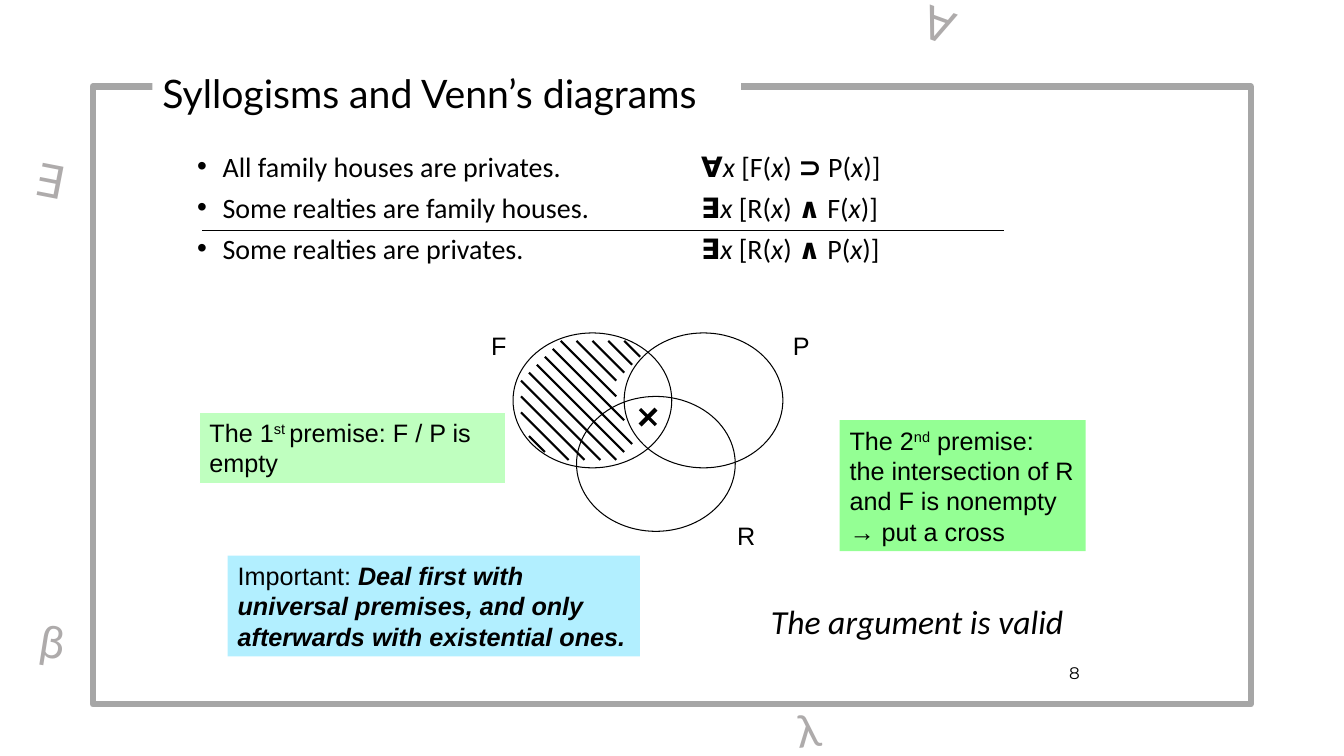
from pptx import Presentation
from pptx.dml.color import RGBColor
from pptx.enum.shapes import MSO_CONNECTOR, MSO_SHAPE
from pptx.enum.text import MSO_ANCHOR, PP_ALIGN
from pptx.oxml.ns import qn
from pptx.util import Cm, Pt
from lxml.etree import SubElement

COLORS = {"black": "000000", "white": "FFFFFF", "frame": "A6A6A6",
          "symbol": "AEABAB", "green": "00FF00", "blue": "00CCFF"}
STYLES = {"": {}, "b": {"bold": True}, "i": {"italic": True},
          "bi": {"bold": True, "italic": True}, "sup": {}}

TITLE = "Syllogisms and Venn’s diagrams"
ARGUMENT = [
    ("All family houses are privates.", "∀", "F", "⊃", "P"),
    ("Some realties are family houses.", "∃", "R", "∧", "F"),
    ("Some realties are privates.", "∃", "R", "∧", "P"),
]
NOTES = [
    ((5.03, 10.39, 7.7, 1.8), "green", 25, "white",
     [("The 1", ""), ("st ", "sup"), ("premise: F / P is empty", "")]),
    ((21.16, 10.59, 6.2, 3.3), "green", 42, None,
     [("The 2", ""), ("nd", "sup"),
      (" premise: the intersection of R and F is nonempty → put a cross", "")]),
    ((5.74, 14, 10.39, 2.54), "blue", 30, None,
     [("Important: ", ""),
      ("Deal first with universal premises, and only afterwards with existential ones.", "bi")]),
]
SYMBOLS = [
    ("∀", (23.01, -0.15, 1.52, 1.63), 20),
    ("∃", (0.64, 3.76, 1.6, 1.63), 11),
    ("β", (0.76, 15.37, 1.47, 1.63), 9),
    ("λ", (19.82, 17.53, 1.82, 1.63), 354),
]

GRID_LEFT, GRID_TOP, STEP = 13.13, 8.59, 0.2
SETS = [("F", (-1, -1), (-5, -2)), ("P", (13, -1), (33, -2)), ("R", (7, 7), (26, 22))]
HATCHES = [
    (13, 0, 2), (11, 0, 3), (9, 0, 4), (7, 0, 5), (5, 0, 7), (4, 1, 9), (3, 2, 11),
    (2, 3, 11), (1, 4, 11), (0, 7, 8), (0, 5, 10), (0, 9, 6), (1, 12, 2),
]
CROSS = (15, 8.6, 2)


def color(name):
    return RGBColor.from_string(COLORS[name])


def lengths(values):
    return [Cm(value) for value in values]


def on_grid(column, row):
    return GRID_LEFT + column * STEP, GRID_TOP + row * STEP


def write(para, spans, size, font, ink="black"):
    for text, style in spans:
        span = para.add_run()
        span.text = text
        formats = {"size": Pt(size), "name": font, **STYLES[style]}
        for name, value in formats.items():
            setattr(span.font, name, value)
        span.font.color.rgb = color(ink)
        if style == "sup":
            span._r.get_or_add_rPr().set("baseline", "30000")


def add_text(page, place, spans, size, font, ink="black"):
    box = page.shapes.add_textbox(*lengths(place))
    box.text_frame.word_wrap = True
    write(box.text_frame.paragraphs[0], spans, size, font, ink)
    return box


def add_line(page, start, end, width):
    line = page.shapes.add_connector(MSO_CONNECTOR.STRAIGHT, *lengths(start + end))
    line.line.color.rgb = color("black")
    line.line.width = Pt(width)
    SubElement(line.element.spPr, qn("a:effectLst"))


def add_outline(page, kind, place, fill=None, line=None, width=0.75):
    shape = page.shapes.add_shape(kind, *lengths(place))
    shape.shadow.inherit = False
    if fill:
        shape.fill.solid()
        shape.fill.fore_color.rgb = color(fill)
    else:
        shape.fill.background()
    if line:
        shape.line.color.rgb = color(line)
        shape.line.width = Pt(width)
    else:
        shape.line.fill.background()
    return shape


def add_argument(page):
    box = page.shapes.add_textbox(*lengths((4.72, 3.81, 24.41, 3.99)))
    frame = box.text_frame
    frame.word_wrap = True
    for index, (sentence, quantifier, first, connective, second) in enumerate(ARGUMENT):
        para = frame.add_paragraph() if index else frame.paragraphs[0]
        para.line_spacing = 0.8
        para.space_before = Pt(10)
        settings = para._p.get_or_add_pPr()
        for name, value in {"marL": Cm(0.64), "indent": Cm(-0.64), "defTabSz": Cm(2.54)}.items():
            settings.set(name, str(int(value)))
        SubElement(settings, qn("a:buFont"), typeface="Arial")
        SubElement(settings, qn("a:buChar"), char="•")
        write(para, [(sentence + "\t\t", ""), (quantifier, "b"), ("x ", "i"),
                     (f"[{first}(", ""), ("x", "i"), (") ", ""), (connective + " ", "b"),
                     (f"{second}(", ""), ("x", "i"), (")]", "")], 20, "Calibri")


def add_venn(page):
    for letter, circle, label in SETS:
        add_outline(page, MSO_SHAPE.OVAL, on_grid(*circle) + (4, 3.4), line="black")
        add_text(page, on_grid(*label) + (1.2, 1.02), [(letter, "")], 18, "Arial")
    for column, row, steps in HATCHES:
        add_line(page, on_grid(column, row), on_grid(column + steps, row + steps), 1.5)
    column, row, steps = CROSS
    add_line(page, on_grid(column, row), on_grid(column + steps, row + steps), 2.25)
    add_line(page, on_grid(column + steps, row), on_grid(column, row + steps), 3)


def add_notes(page):
    for place, fill, opacity, line, spans in NOTES:
        note = add_outline(page, MSO_SHAPE.RECTANGLE, place, fill, line)
        tint = note.element.spPr.find(qn("a:solidFill"))[0]
        SubElement(tint, qn("a:alpha"), val=str(opacity * 1000))
        note.text_frame.word_wrap = True
        note.text_frame.vertical_anchor = MSO_ANCHOR.TOP
        para = note.text_frame.paragraphs[0]
        para.alignment = PP_ALIGN.LEFT
        write(para, spans, 18, "Arial")


def add_title(page):
    title = page.shapes.title
    title.left, title.top, title.width, title.height = lengths((3.84, 1.02, 14.83, 2.62))
    title.fill.solid()
    title.fill.fore_color.rgb = color("white")
    title.text_frame.word_wrap = True
    title.text_frame.vertical_anchor = MSO_ANCHOR.MIDDLE
    para = title.text_frame.paragraphs[0]
    para.alignment = PP_ALIGN.LEFT
    write(para, [(TITLE, "")], 28, "Lato")
    title.element.getparent().append(title.element)


def main():
    deck = Presentation()
    deck.slide_width, deck.slide_height = Cm(33.87), Cm(19.05)
    page = deck.slides.add_slide(deck.slide_layouts[5])
    add_argument(page)
    number = add_text(page, (21.54, 16.33, 5.92, 1.27), [("8", "")], 12, "Montserrat")
    number.text_frame.vertical_anchor = MSO_ANCHOR.MIDDLE
    number.text_frame.paragraphs[0].alignment = PP_ALIGN.RIGHT
    add_venn(page)
    add_notes(page)
    add_line(page, (5.1, 5.82), (25.3, 5.82), 0.75)
    add_outline(page, MSO_SHAPE.RECTANGLE, (2.34, 2.18, 29.18, 15.57), line="frame", width=4.5)
    add_title(page)
    for symbol, place, angle in SYMBOLS:
        add_text(page, place, [(symbol, "")], 32, "Lato", "symbol").rotation = angle
    add_text(page, (19.18, 15.01, 8.94, 1.27), [("The argument is valid", "i")], 24, "Calibri")
    deck.save("out.pptx")


if __name__ == "__main__":
    main()
